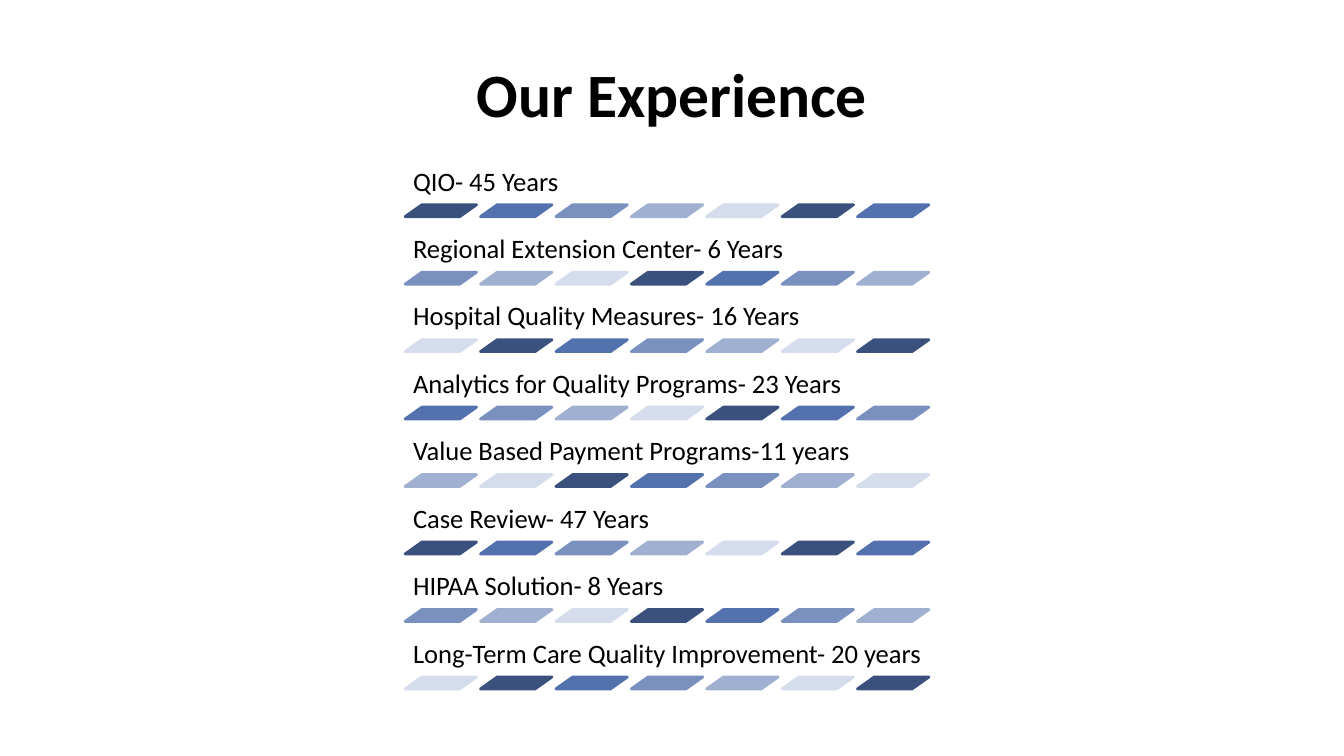
from dataclasses import dataclass

from pptx import Presentation
from pptx.dml.color import RGBColor
from pptx.enum.shapes import MSO_SHAPE
from pptx.enum.text import MSO_ANCHOR, MSO_AUTO_SIZE, PP_ALIGN
from pptx.slide import Slide
from pptx.util import Cm, Pt

PARALLELOGRAM = MSO_SHAPE.PARALLELOGRAM
MIDDLE, BOTTOM = MSO_ANCHOR.MIDDLE, MSO_ANCHOR.BOTTOM
NO_AUTOFIT = MSO_AUTO_SIZE.NONE
CENTER, LEFT = PP_ALIGN.CENTER, PP_ALIGN.LEFT
TITLE_ONLY = 5


@dataclass(frozen=True)
class Theme:
    font: str = "Calibri"
    ink: str = "000000"
    title_size: int = 44
    label_size: int = 19
    outline_width: int = 2
    dashes: tuple[str, ...] = ("3B517D", "5371AD", "7A91C0", "9FB0D1", "D5DCEB")


@dataclass(frozen=True)
class Box:
    left: float
    top: float
    width: float
    height: float

    def emu(self) -> tuple[int, ...]:
        return tuple(Cm(v) for v in (self.left, self.top, self.width, self.height))


@dataclass(frozen=True)
class Experience:
    label: str
    row: int


THEME = Theme()
TITLE_BOX = Box(1.7, 0.76, 30.48, 3.18)

# Grid of labels and dashes, in centimetres
LIST_LEFT, LIST_TOP = 10.21, 3.94
LABEL_WIDTH, LABEL_HEIGHT, LABEL_INSET = 13.46, 1.22, 0.2
ROW_PITCH = 1.7
DASH_COUNT, DASH_PITCH = 7, 1.9
DASH_WIDTH, DASH_HEIGHT, DASH_SLANT = 1.8, 0.3, 1.41

LABELS = (
    "QIO- 45 Years",
    "Regional Extension Center- 6 Years",
    "Hospital Quality Measures- 16 Years",
    "Analytics for Quality Programs- 23 Years",
    "Value Based Payment Programs-11 years",
    "Case Review- 47 Years",
    "HIPAA Solution- 8 Years",
    "Long-Term Care Quality Improvement- 20 years",
)
EXPERIENCES = [Experience(label, row) for row, label in enumerate(LABELS)]


def apply(target: object, formats: dict[str, object]) -> None:
    for name, value in formats.items():
        setattr(target, name, value)


def write(shape, wording: str, size: int, bold: bool, frame_format: dict, line_format: dict) -> None:
    frame = shape.text_frame
    frame.text = wording
    apply(frame, {"word_wrap": True, "auto_size": NO_AUTOFIT, **frame_format})
    line = frame.paragraphs[0]
    apply(line, line_format)
    font = line.runs[0].font
    apply(font, {"name": THEME.font, "size": Pt(size), "bold": bold})
    font.color.rgb = RGBColor.from_string(THEME.ink)


def draw_title(slide: Slide, wording: str) -> None:
    title = slide.shapes.title
    apply(title, dict(zip(("left", "top", "width", "height"), TITLE_BOX.emu())))
    write(title, wording, THEME.title_size, True,
          {"vertical_anchor": MIDDLE}, {"alignment": CENTER})


def draw_label(slide: Slide, experience: Experience) -> None:
    place = Box(LIST_LEFT, LIST_TOP + experience.row * ROW_PITCH, LABEL_WIDTH, LABEL_HEIGHT)
    label = slide.shapes.add_textbox(*place.emu())
    sides = ("left", "top", "right", "bottom")
    insets = {f"margin_{side}": Cm(LABEL_INSET) for side in sides}
    write(label, experience.label, THEME.label_size, False,
          {"vertical_anchor": BOTTOM, **insets},
          {"alignment": LEFT, "line_spacing": 0.9})


def draw_dashes(slide: Slide, row: int) -> None:
    top = LIST_TOP + row * ROW_PITCH + LABEL_HEIGHT
    for column in range(DASH_COUNT):
        place = Box(LIST_LEFT + column * DASH_PITCH, top, DASH_WIDTH, DASH_HEIGHT)
        dash = slide.shapes.add_shape(PARALLELOGRAM, *place.emu())
        dash.adjustments[0] = DASH_SLANT
        dash.shadow.inherit = False
        # The palette runs on from one row to the next
        shade_index = (row * DASH_COUNT + column) % len(THEME.dashes)
        shade = RGBColor.from_string(THEME.dashes[shade_index])
        dash.fill.solid()
        dash.fill.fore_color.rgb = shade
        dash.line.color.rgb = shade
        dash.line.width = Pt(THEME.outline_width)


def main() -> None:
    deck = Presentation()
    apply(deck, {"slide_width": Cm(33.87), "slide_height": Cm(19.05)})
    slide = deck.slides.add_slide(deck.slide_layouts[TITLE_ONLY])

    # Heading
    draw_title(slide, "Our Experience")

    # One label with its row of dashes per field of experience
    for experience in EXPERIENCES:
        draw_label(slide, experience)
        draw_dashes(slide, experience.row)

    deck.save("out.pptx")


if __name__ == "__main__":
    main()
